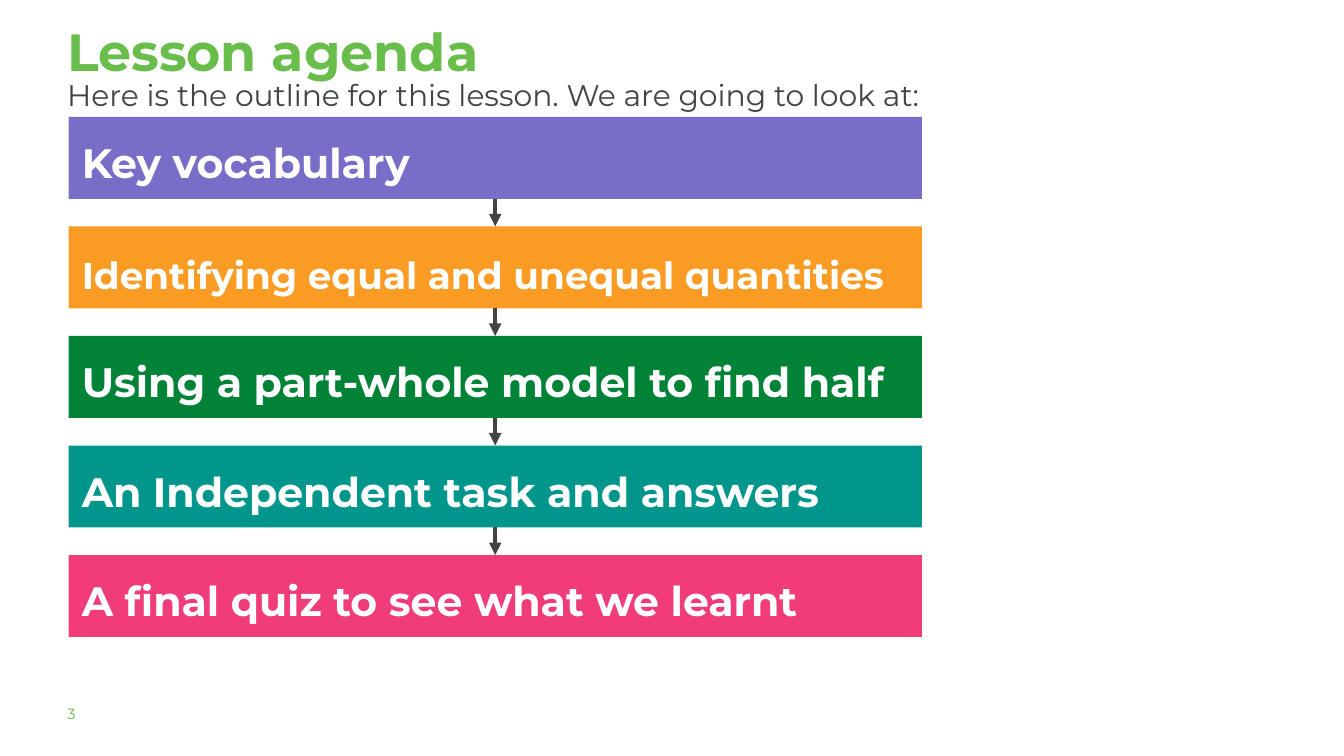
from dataclasses import dataclass

from lxml.etree import SubElement
from pptx import Presentation
from pptx.dml.color import RGBColor
from pptx.enum.shapes import MSO_CONNECTOR, MSO_SHAPE
from pptx.enum.text import MSO_ANCHOR, PP_ALIGN
from pptx.oxml.ns import qn
from pptx.util import Inches, Pt


@dataclass(frozen=True)
class Theme:
    font: str = "Montserrat"
    title: str = "69BE4B"
    page_number: str = "65BE4B"
    dark: str = "434343"
    white: str = "FFFFFF"
    purple: str = "786EC8"
    orange: str = "FA9B23"
    green: str = "008237"
    teal: str = "00968C"
    pink: str = "F03C78"
    title_size: float = 28
    step_size: float = 22
    long_step_size: float = 20
    intro_size: float = 16
    page_number_size: float = 8
    arrow_width: float = 2.25


THEME = Theme()

# Label, fill, type size, line spacing, anchor
STEPS = [
    ("Key vocabulary", THEME.purple, THEME.step_size, 1.15, MSO_ANCHOR.TOP),
    ("Identifying equal and unequal quantities", THEME.orange,
     THEME.long_step_size, 1.3, MSO_ANCHOR.MIDDLE),
    ("Using a part-whole model to find half", THEME.green,
     THEME.step_size, 1.15, MSO_ANCHOR.TOP),
    ("An Independent task and answers", THEME.teal,
     THEME.step_size, 1.15, MSO_ANCHOR.TOP),
    ("A final quiz to see what we learnt", THEME.pink,
     THEME.step_size, 1.15, MSO_ANCHOR.TOP),
]


def set_text(shape, text, size, color, bold=False, spacing=1.0, inset=0.0,
             anchor=MSO_ANCHOR.TOP):
    frame = shape.text_frame
    frame.text = text
    frame.word_wrap = True
    frame.vertical_anchor = anchor
    frame.margin_left = frame.margin_right = Inches(inset)
    frame.margin_top = frame.margin_bottom = Inches(inset)
    paragraph = frame.paragraphs[0]
    paragraph.alignment = PP_ALIGN.LEFT
    paragraph.line_spacing = spacing
    font = paragraph.runs[0].font
    font.name = THEME.font
    font.size = Pt(size)
    font.bold = bold
    font.color.rgb = RGBColor.from_string(color)


def add_text(slide, left, top, width, height, text, size, color, **style):
    shape = slide.shapes.add_textbox(
        Inches(left), Inches(top), Inches(width), Inches(height))
    set_text(shape, text, size, color, **style)


def add_heading(slide, left, top, width):
    add_text(slide, left, top, width, 0.62, "Lesson agenda",
             THEME.title_size, THEME.title, bold=True, spacing=1.15)
    add_text(slide, left, top + 0.42, 6.62, 0.38,
             "Here is the outline for this lesson. We are going to look at:",
             THEME.intro_size, THEME.dark, spacing=1.3)


def add_arrow(slide, x, top, bottom):
    arrow = slide.shapes.add_connector(
        MSO_CONNECTOR.STRAIGHT, Inches(x), Inches(top), Inches(x), Inches(bottom))
    arrow.line.color.rgb = RGBColor.from_string(THEME.dark)
    arrow.line.width = Pt(THEME.arrow_width)
    line = arrow._element.spPr.find(qn("a:ln"))
    SubElement(line, qn("a:tailEnd"), type="triangle")
    SubElement(arrow._element.spPr, qn("a:effectLst"))


def add_agenda(slide, left, top, width, height, bar_height=0.61):
    """Spread the steps evenly over the box and join them with arrows."""
    pitch = (height - bar_height) / (len(STEPS) - 1)
    for index, (label, fill, size, spacing, anchor) in enumerate(STEPS):
        bar_top = top + index * pitch
        bar = slide.shapes.add_shape(
            MSO_SHAPE.RECTANGLE, Inches(left), Inches(bar_top),
            Inches(width), Inches(bar_height))
        bar.shadow.inherit = False
        bar.fill.solid()
        bar.fill.fore_color.rgb = RGBColor.from_string(fill)
        bar.line.fill.background()
        set_text(bar, label, size, THEME.white, bold=True, spacing=spacing,
                 inset=0.1, anchor=anchor)
        if index:
            add_arrow(slide, left + width / 2,
                      bar_top - pitch + bar_height, bar_top)


def main():
    presentation = Presentation()
    presentation.slide_width = Inches(10)
    presentation.slide_height = presentation.slide_width * 9 // 16
    slide = presentation.slides.add_slide(presentation.slide_layouts[6])
    add_heading(slide, 0.5, 0.07, 9)
    add_agenda(slide, 0.51, 0.87, 6.35, 3.87)
    add_text(slide, 0.5, 5.24, 0.79, 0.2, "3",
             THEME.page_number_size, THEME.page_number)
    presentation.save("out.pptx")


if __name__ == "__main__":
    main()
